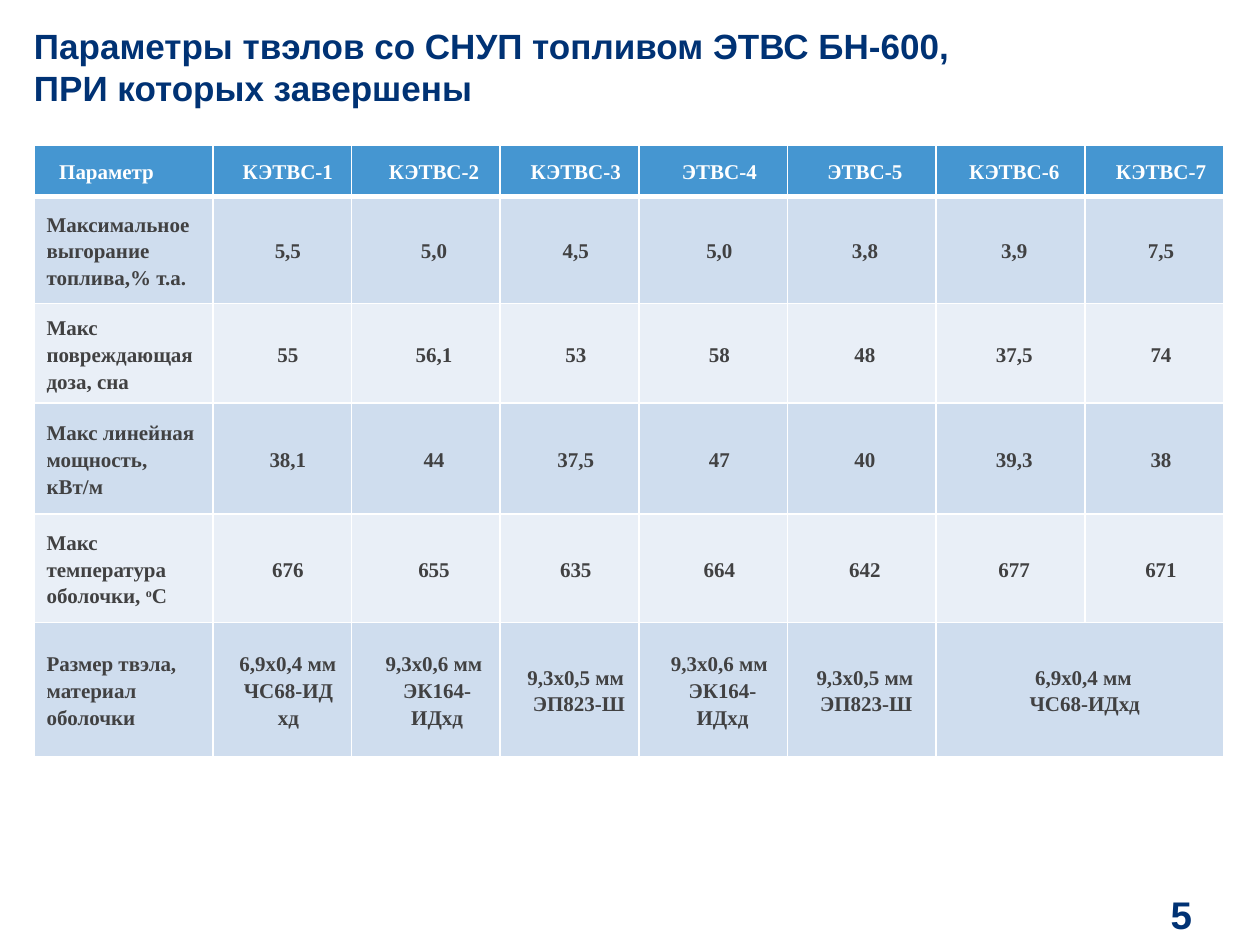
import pptx
import pptx.dml.color
import pptx.enum.text
import pptx.oxml.ns
import pptx.util
from lxml import etree

Inches = pptx.util.Inches
Pt = pptx.util.Pt
RGBColor = pptx.dml.color.RGBColor
Align = pptx.enum.text.PP_ALIGN
Anchor = pptx.enum.text.MSO_ANCHOR
qn = pptx.oxml.ns.qn

NAVY = RGBColor(0x00, 0x32, 0x74)
BLUE = RGBColor(0x45, 0x96, 0xD1)
PALE = RGBColor(0xCF, 0xDD, 0xEE)
LIGHT = RGBColor(0xE9, 0xEF, 0xF7)
GRAY = RGBColor(0x41, 0x41, 0x42)
WHITE = RGBColor(0xFF, 0xFF, 0xFF)

WIDTHS = [1.42, 1.1, 1.18, 1.1, 1.18, 1.18, 1.18, 1.1]
HEIGHTS = [0.41, 0.85, 0.73, 0.88, 0.86, 1.07]
INDENTS = [(0, 0), (0.1, -0.01), (0.18, -0.05), (0.15, -0.05),
           (0.15, -0.05), (0.07, -0.02), (0.08, -0.02), (0.03, 0.08)]
ROWS = [
    ["Параметр", "КЭТВС-1", "КЭТВС-2", "КЭТВС-3",
     "ЭТВС-4", "ЭТВС-5", "КЭТВС-6", "КЭТВС-7"],
    ["Максимальное выгорание топлива,% т.а.",
     "5,5", "5,0", "4,5", "5,0", "3,8", "3,9", "7,5"],
    ["Макс повреждающая доза, сна",
     "55", "56,1", "53", "58", "48", "37,5", "74"],
    ["Макс линейная мощность, кВт/м",
     "38,1", "44", "37,5", "47", "40", "39,3", "38"],
    ["Макс температура оболочки, ^о^С",
     "676", "655", "635", "664", "642", "677", "671"],
    ["Размер твэла,\nматериал оболочки", "6,9х0,4 мм\nЧС68-ИД хд",
     "9,3х0,6 мм\nЭК164-ИДхд", "9,3х0,5 мм\nЭП823-Ш",
     "9,3х0,6 мм\nЭК164-ИДхд", "9,3х0,5 мм\nЭП823-Ш",
     "6,9х0,4 мм\nЧС68-ИДхд", ""],
]


class Deck:
    """Holds the style and the current slide, and draws each kind of element."""

    def __init__(self, slide):
        self.slide = slide
        self.head = "Arial"
        self.body = "Times New Roman"

    def style(self, para, name, size, color):
        font = para.font
        font.name, font.size, font.bold = name, Pt(size), True
        font.color.rgb = color

    def text(self, text, box, size, pad=(0, 0), align=Align.LEFT, anchor=Anchor.TOP):
        frame = self.slide.shapes.add_textbox(*map(Inches, box)).text_frame
        frame.word_wrap = True
        frame.vertical_anchor = anchor
        frame.margin_left = frame.margin_right = Inches(pad[0])
        frame.margin_top = frame.margin_bottom = Inches(pad[1])
        para = frame.paragraphs[0]
        para.text, para.alignment = text, align
        self.style(para, self.head, size, NAVY)

    def edge(self, cell, side, width):
        props = cell._tc.get_or_add_tcPr()
        line = etree.SubElement(props, qn(f"a:ln{side}"), w=str(Pt(width)))
        fill = etree.SubElement(line, qn("a:solidFill"))
        etree.SubElement(fill, qn("a:srgbClr"), val=str(WHITE))

    def cell(self, cell, text, row, col):
        for side in "LRTB":
            thick = (row, side) in ((0, "B"), (1, "T"))
            self.edge(cell, side, 3 if thick else 1)
        cell.fill.solid()
        cell.fill.fore_color.rgb = BLUE if row == 0 else PALE if row % 2 else LIGHT
        cell.vertical_anchor = Anchor.MIDDLE
        para = cell.text_frame.paragraphs[0]
        if "^" in text:
            for spot, part in enumerate(text.split("^")):
                run = para.add_run()
                run.text = part
                if spot % 2:
                    run.font._element.set("baseline", "30000")
        else:
            para.text = text
        para.alignment = Align.CENTER if col else Align.LEFT
        para.line_spacing = 1.15
        left, first = (0.1, 0) if row == col == 0 else INDENTS[col]
        props = para._p.get_or_add_pPr()
        props.set("marL", str(Inches(left)))
        props.set("indent", str(Inches(first)))
        self.style(para, self.body, 12, GRAY if row else WHITE)

    def table(self, rows, left, top):
        size = sum(WIDTHS), sum(HEIGHTS)
        shape = self.slide.shapes.add_table(
            len(rows), len(WIDTHS), *map(Inches, (left, top, *size)))
        table = shape.table
        for col, width in zip(table.columns, WIDTHS):
            col.width = Inches(width)
        for row, height in zip(table.rows, HEIGHTS):
            row.height = Inches(height)
        for row, texts in enumerate(rows):
            for col, text in enumerate(texts):
                self.cell(table.cell(row, col), text, row, col)
        table.cell(5, 6).merge(table.cell(5, 7))


def main():
    prs = pptx.Presentation()
    prs.slide_width, prs.slide_height = Inches(10), Inches(7.5)
    deck = Deck(prs.slides.add_slide(prs.slide_layouts[6]))
    deck.text("Параметры твэлов со СНУП топливом ЭТВС БН-600, ПРИ которых завершены",
              (0.27, 0, 7.56, 1.05), 20, anchor=Anchor.MIDDLE)
    deck.table(ROWS, 0.27, 1.15)
    deck.text("5", (9.03, 7.05, 0.69, 0.41), 22, (0.05, 0.02), Align.CENTER)
    prs.save("out.pptx")


if __name__ == "__main__":
    main()
